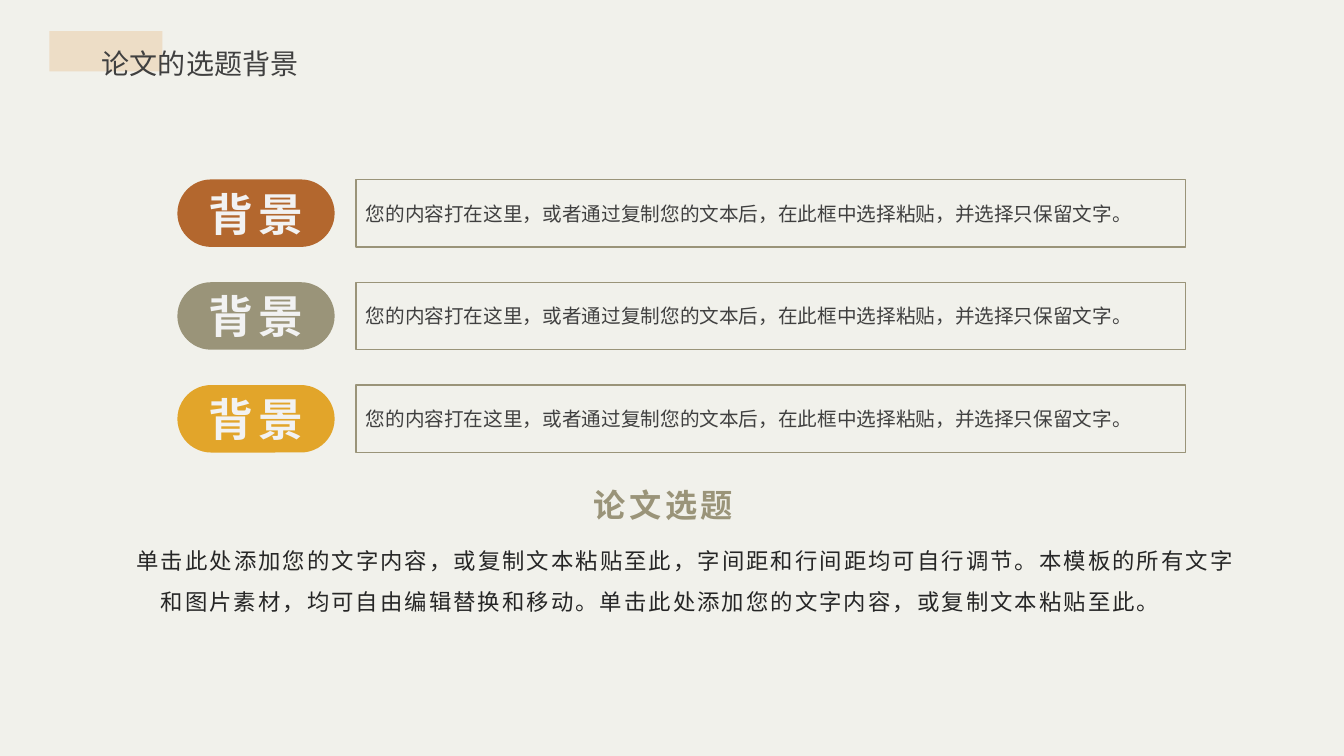
from dataclasses import dataclass

from lxml.etree import SubElement
from pptx import Presentation
from pptx.dml.color import RGBColor
from pptx.enum.shapes import MSO_SHAPE
from pptx.enum.text import MSO_ANCHOR, MSO_AUTO_SIZE, PP_ALIGN
from pptx.oxml.ns import qn
from pptx.util import Inches, Pt

SLIDE_WIDTH = Inches(13.33)
SLIDE_HEIGHT = Inches(7.5)


@dataclass(frozen=True)
class Theme:
    font: str = "Noto Sans CJK SC"
    background: str = "F1F1EB"
    accent: str = "EDDDC6"
    olive: str = "9A9479"
    rust: str = "B3672E"
    amber: str = "E2A52A"
    light: str = "F2F2F2"
    text: str = "404040"
    dark: str = "262626"
    label_size: int = 32
    heading_size: int = 23
    title_size: int = 20
    body_size: int = 16
    detail_size: int = 14


THEME = Theme()
DETAIL = "您的内容打在这里，或者通过复制您的文本后，在此框中选择粘贴，并选择只保留文字。"
SUMMARY = (
    "单击此处添加您的文字内容，或复制文本粘贴至此，字间距和行间距均可自行调节。"
    "本模板的所有文字和图片素材，均可自由编辑替换和移动。"
    "单击此处添加您的文字内容，或复制文本粘贴至此。"
)
ROWS = [("背景", THEME.rust), ("背景", THEME.olive), ("背景", THEME.amber)]
FIRST_ROW, ROW_PITCH, ROW_HEIGHT = 23.73, 13.6, 8.93


def area(left, top, width, height):
    return (
        int(SLIDE_WIDTH * left / 100),
        int(SLIDE_HEIGHT * top / 100),
        int(SLIDE_WIDTH * width / 100),
        int(SLIDE_HEIGHT * height / 100),
    )


def write(shape, text, size, color, bold=False, spacing=0,
          align=PP_ALIGN.LEFT, anchor=MSO_ANCHOR.TOP, wrap=True):
    frame = shape.text_frame
    frame.word_wrap = wrap
    frame.auto_size = MSO_AUTO_SIZE.NONE
    frame.vertical_anchor = anchor
    frame.text = text
    paragraph = frame.paragraphs[0]
    paragraph.alignment = align
    font = paragraph.font
    font.size = Pt(size)
    font.bold = bold
    font.color.rgb = RGBColor.from_string(color)
    font.name = THEME.font
    properties = paragraph._p.get_or_add_pPr().get_or_add_defRPr()
    properties.set("spc", str(int(spacing * 100)))
    SubElement(properties, qn("a:ea"), typeface=THEME.font)
    return paragraph


def add_box(slide, kind, place, fill=None, line=None):
    shape = slide.shapes.add_shape(kind, *area(*place))
    shape.shadow.inherit = False
    if fill:
        shape.fill.solid()
        shape.fill.fore_color.rgb = RGBColor.from_string(fill)
    else:
        shape.fill.background()
    if line:
        shape.line.color.rgb = RGBColor.from_string(line)
        shape.line.width = Pt(1)
    else:
        shape.line.fill.background()
    return shape


def add_title(slide, text):
    title = slide.shapes.title
    title.left, title.top, title.width, title.height = area(6.83, 3.2, 26.26, 7.33)
    paragraph = write(title, text, THEME.title_size, THEME.text, align=PP_ALIGN.JUSTIFY)
    paragraph.line_spacing = 1.5
    accent = add_box(slide, MSO_SHAPE.RECTANGLE, (3.68, 4.13, 8.4, 5.33), THEME.accent)
    title._element.addprevious(accent._element)


def add_row(slide, top, label, color):
    pill = add_box(slide, MSO_SHAPE.ROUNDED_RECTANGLE, (13.2, top, 11.7, ROW_HEIGHT), color)
    pill.adjustments[0] = 0.5
    write(pill, label, THEME.label_size, THEME.light, bold=True, spacing=4,
          align=PP_ALIGN.CENTER, anchor=MSO_ANCHOR.MIDDLE)
    detail = add_box(slide, MSO_SHAPE.RECTANGLE, (26.48, top, 61.74, ROW_HEIGHT),
                     line=THEME.olive)
    write(detail, DETAIL, THEME.detail_size, THEME.text, anchor=MSO_ANCHOR.MIDDLE)


def add_summary(slide):
    body = slide.shapes.add_textbox(*area(4.8, 70, 88.75, 11.47))
    paragraph = write(body, SUMMARY, THEME.body_size, THEME.dark, spacing=1.5,
                      align=PP_ALIGN.CENTER)
    paragraph.line_spacing = 1.5
    paragraph.space_after = Pt(15)
    paragraph._p.get_or_add_pPr().set("indent", str(Inches(0.51)))
    heading = slide.shapes.add_textbox(*area(43.44, 63.6, 12.3, 6.53))
    write(heading, "论文选题", THEME.heading_size, THEME.olive, bold=True,
          spacing=2.5, wrap=False)


def main():
    presentation = Presentation()
    presentation.slide_width = SLIDE_WIDTH
    presentation.slide_height = SLIDE_HEIGHT
    slide = presentation.slides.add_slide(presentation.slide_layouts[5])
    slide.background.fill.solid()
    slide.background.fill.fore_color.rgb = RGBColor.from_string(THEME.background)
    add_title(slide, "论文的选题背景")
    for index, (label, color) in enumerate(ROWS):
        add_row(slide, FIRST_ROW + index * ROW_PITCH, label, color)
    add_summary(slide)
    presentation.save("out.pptx")


if __name__ == "__main__":
    main()
